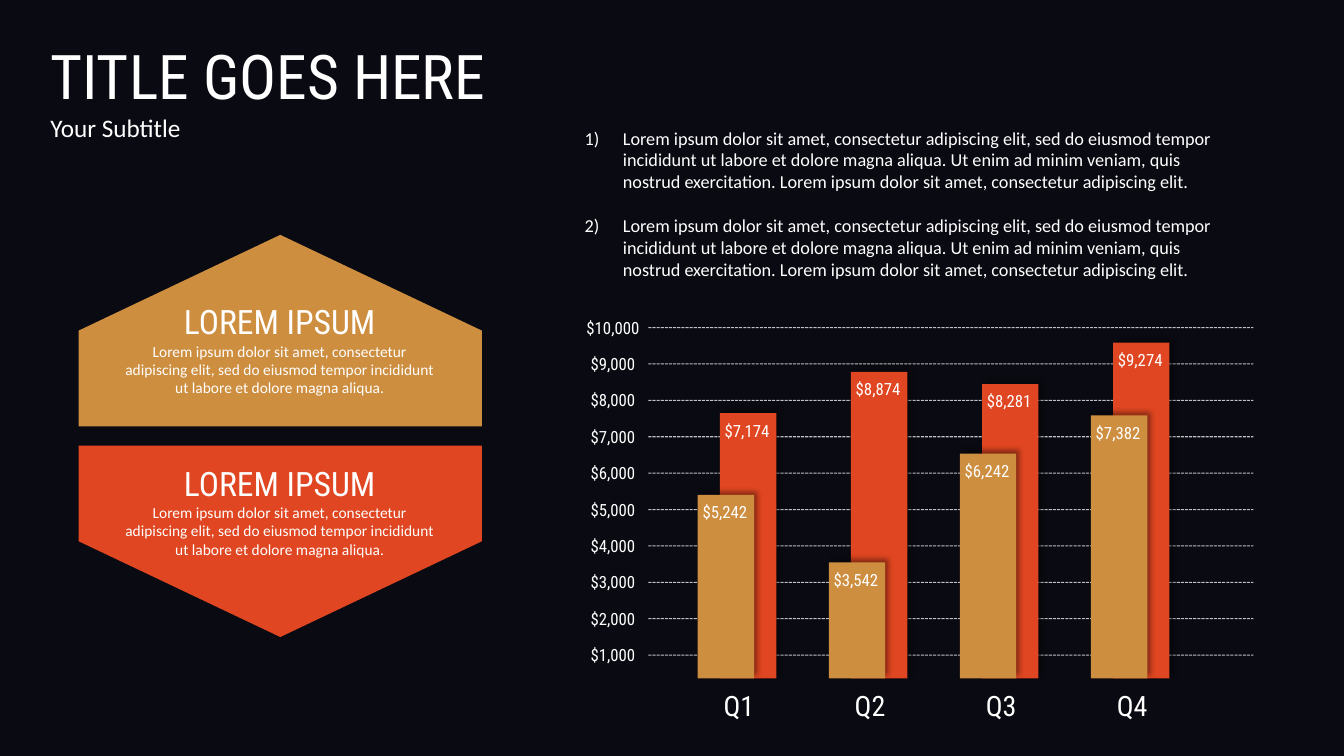
"""Build a dark slide with two text pentagons, a numbered list and a drawn quarterly bar comparison."""
from lxml.etree import SubElement
from pptx import Presentation
from pptx.dml.color import RGBColor
from pptx.enum.dml import MSO_LINE
from pptx.enum.shapes import MSO_CONNECTOR, MSO_SHAPE as SHAPE
from pptx.enum.text import MSO_ANCHOR as ANCHOR, PP_ALIGN as ALIGN
from pptx.oxml.ns import qn
from pptx.util import Inches, Pt

COLORS = {"background": "0A0A12", "gold": "CE8E40", "red": "E04621", "white": "FFFFFF", "shadow": "000000"}
HEADING, BODY = "Roboto Condensed", "Calibri"
LOREM = "Lorem ipsum dolor sit amet, consectetur adipiscing elit, sed do eiusmod tempor incididunt ut labore et dolore magna aliqua."
LONG_LOREM = LOREM + " Ut enim ad minim veniam, quis nostrud exercitation. Lorem ipsum dolor sit amet, consectetur adipiscing elit."

presentation = Presentation()
presentation.slide_width, presentation.slide_height = Inches(13.33), Inches(7.5)
slide = presentation.slides.add_slide(presentation.slide_layouts[5])
slide.background.fill.solid()
slide.background.fill.fore_color.rgb = RGBColor.from_string(COLORS["background"])


def write(shape, lines, align=ALIGN.CENTER, margin=0.0):
    """Fill a shape with (text, size, font) lines in white."""
    frame = shape.text_frame
    frame.word_wrap = True
    frame.vertical_anchor = ANCHOR.TOP
    frame.margin_left = frame.margin_right = Inches(margin)
    frame.margin_top = frame.margin_bottom = Inches(margin / 2)
    frame.text = "\n".join(text for text, size, font in lines)
    for paragraph, (text, size, font) in zip(frame.paragraphs, lines):
        paragraph.alignment = align
        for run in paragraph.runs:
            run.font.size, run.font.name = Pt(size), font
            run.font.color.rgb = RGBColor.from_string(COLORS["white"])
    return frame


def add_block(kind, left, top, width, height, color):
    """Add a plain filled shape without outline."""
    block = slide.shapes.add_shape(kind, Inches(left), Inches(top), Inches(width), Inches(height))
    block.shadow.inherit = False
    block.fill.solid()
    block.fill.fore_color.rgb = RGBColor.from_string(COLORS[color])
    block.line.fill.background()
    return block


title = slide.shapes.title
title.left, title.top, title.width, title.height = Inches(0.4), Inches(0.33), Inches(6.5), Inches(1.14)
write(title, [("TITLE GOES HERE", 44, HEADING), ("Your Subtitle", 18, BODY)], ALIGN.LEFT, 0.1)

AXIS_TOP, AXIS_STEP, AXIS_ROWS = 3.25, 0.361, 10
for row in range(AXIS_ROWS):
    y = AXIS_TOP + row * AXIS_STEP
    grid_line = slide.shapes.add_connector(
        MSO_CONNECTOR.STRAIGHT, Inches(6.43), Inches(y), Inches(12.43), Inches(y))
    grid_line.line.width = Pt(0.75)
    grid_line.line.color.rgb = RGBColor.from_string(COLORS["white"])
    grid_line.line.dash_style = MSO_LINE.SQUARE_DOT
    properties = grid_line._element.spPr
    SubElement(properties.find(".//" + qn("a:srgbClr")), qn("a:alpha"), val="75000")
    SubElement(properties, qn("a:effectLst"))
    axis_label = slide.shapes.add_textbox(Inches(5.68), Inches(y - 0.15), Inches(0.8), Inches(0.3))
    write(axis_label, [(f"${(AXIS_ROWS - row) * 1000:,}", 12, HEADING)],
          ALIGN.CENTER, 0.1)

QUARTER_LEFT, QUARTER_STEP, BAR_WIDTH, BASELINE = 6.92, 1.3, 0.56, 6.73
quarters = [
    ("Q1", ("$7,174", 4.10), ("$5,242", 4.91)),
    ("Q2", ("$8,874", 3.69), ("$3,542", 5.58)),
    ("Q3", ("$8,281", 3.81), ("$6,242", 4.50)),
    ("Q4", ("$9,274", 3.40), ("$7,382", 4.12)),
]
for column, (quarter, red_bar, gold_bar) in enumerate(quarters):
    quarter_left = QUARTER_LEFT + column * QUARTER_STEP
    for (value, top), color, shift in ((red_bar, "red", 0.22), (gold_bar, "gold", 0)):
        left = quarter_left + shift
        bar = add_block(SHAPE.RECTANGLE, left, top, BAR_WIDTH, BASELINE - top, color)
        shadow = SubElement(bar._element.spPr.find(qn("a:effectLst")), qn("a:outerShdw"),
                            blurRad=str(Pt(4)), dist=str(Pt(3)), dir=str(315 * 60000),
                            algn="bl", rotWithShape="0")
        shadow_color = SubElement(shadow, qn("a:srgbClr"), val=COLORS["shadow"])
        SubElement(shadow_color, qn("a:alpha"), val="40000")
        value_label = slide.shapes.add_textbox(Inches(left - 0.03), Inches(top + 0.07), Inches(0.6), Inches(0.2))
        write(value_label, [(value, 12, HEADING)])
    quarter_label = slide.shapes.add_textbox(
        Inches(quarter_left + 0.13), Inches(6.83), Inches(BAR_WIDTH), Inches(0.34))
    write(quarter_label, [(quarter, 20, HEADING)])

numbered_list = slide.shapes.add_textbox(Inches(5.7), Inches(1.21), Inches(6.65), Inches(1.85))
list_frame = write(numbered_list, [(LONG_LOREM, 13, BODY)] * 2, ALIGN.LEFT, 0.1)
for paragraph in list_frame.paragraphs:
    paragraph_properties = paragraph._p.get_or_add_pPr()
    paragraph_properties.set("marL", str(Inches(0.38)))
    paragraph_properties.set("indent", str(-Inches(0.38)))
    SubElement(paragraph_properties, qn("a:buFont"), typeface="+mj-lt")
    SubElement(paragraph_properties, qn("a:buAutoNum"), type="arabicParenR")
list_frame.paragraphs[1].space_before = Pt(15.8)

for color, top, rotation, text_top in (("gold", 1.28, 270, 2.94), ("red", 3.37, 90, 4.54)):
    pentagon = add_block(SHAPE.PENTAGON, 1.83, top, 1.9, 4, color)
    pentagon.rotation = rotation
    pentagon_text = slide.shapes.add_textbox(Inches(1.11), Inches(text_top), Inches(3.33), Inches(1.06))
    write(pentagon_text, [("LOREM IPSUM", 24, HEADING), (LOREM, 11, BODY)], ALIGN.CENTER, 0.1)

presentation.save("out.pptx")
